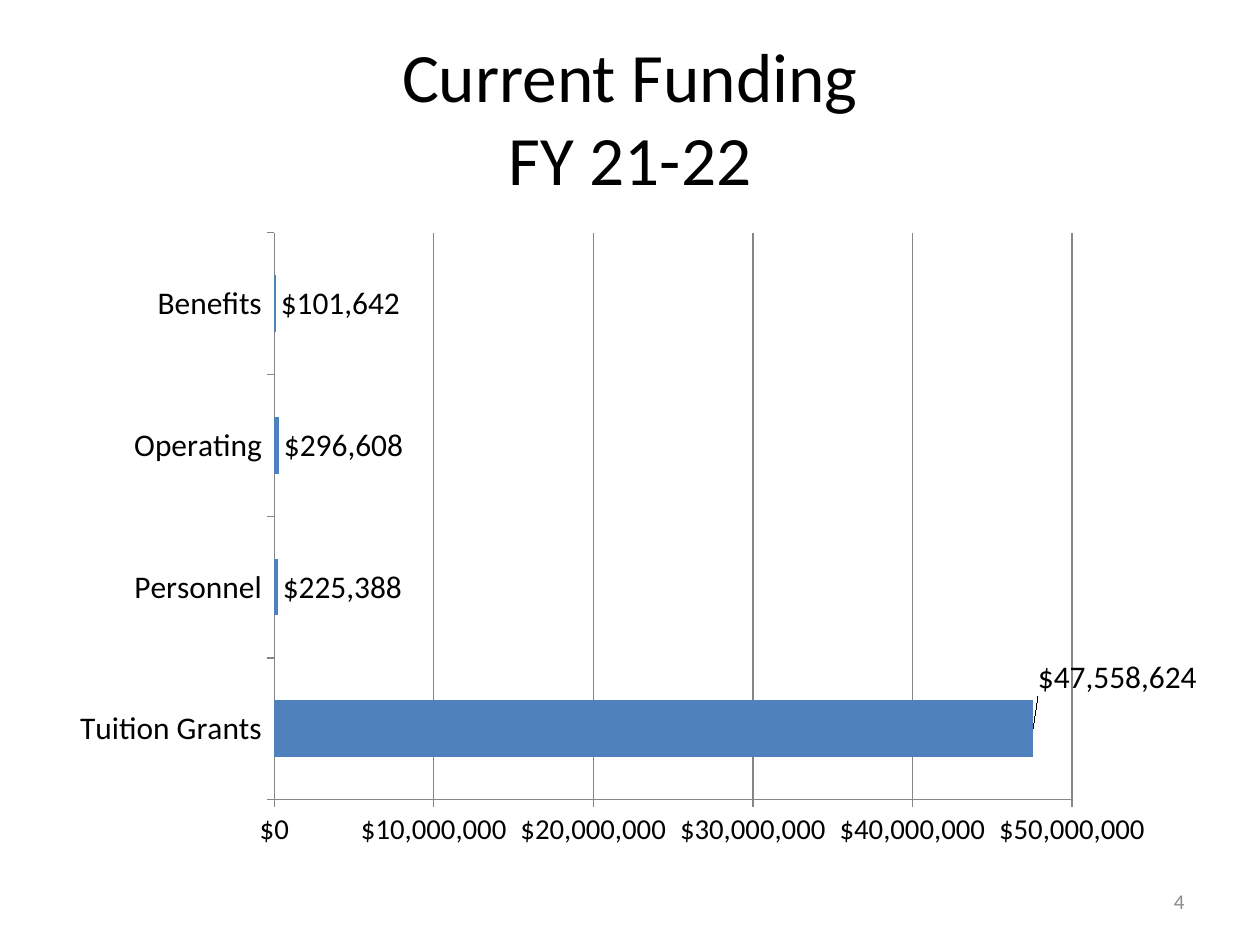
from lxml.etree import SubElement
from pptx import Presentation
from pptx.chart.data import CategoryChartData
from pptx.dml.color import RGBColor
from pptx.enum.chart import XL_CHART_TYPE, XL_LABEL_POSITION, XL_TICK_MARK
from pptx.enum.text import MSO_ANCHOR, MSO_AUTO_SIZE, PP_ALIGN
from pptx.oxml.ns import qn
from pptx.util import Pt

PX = 914400 / 126
BLACK = RGBColor(0x00, 0x00, 0x00)
GRAY = RGBColor(0x8C, 0x8C, 0x8C)
AXIS_GRAY = RGBColor(0x86, 0x86, 0x86)
BLUE = RGBColor(0x4F, 0x81, 0xBD)
FONT = "Calibri"
DOLLARS = '"$"#,##0'


def px(*lengths):
    return [round(length * PX) for length in lengths]


def add_manual_layout(parent, position, **settings):
    """Insert a c:layout with the given settings as a child of parent."""
    layout = SubElement(parent, qn("c:layout"))
    manual = SubElement(layout, qn("c:manualLayout"))
    for name, value in settings.items():
        SubElement(manual, qn(f"c:{name}")).set("val", str(value))
    parent.insert(position, layout)


deck = Presentation()
deck.slide_width, deck.slide_height = px(1260, 945)
page = deck.slides.add_slide(deck.slide_layouts[5])

title = page.shapes.title
title.left, title.top, title.width, title.height = px(63, 38, 1134, 157)
title.text_frame.text = "Current Funding\vFY 21-22"
title.text_frame.auto_size = MSO_AUTO_SIZE.NONE
number = page.shapes.add_textbox(*px(903, 876, 294, 50))
number.text_frame.text = "4"
for box, size, color, alignment in (
    (title, 39.6, BLACK, PP_ALIGN.CENTER),
    (number, 12, GRAY, PP_ALIGN.RIGHT),
):
    box.text_frame.word_wrap = True
    box.text_frame.vertical_anchor = MSO_ANCHOR.MIDDLE
    para = box.text_frame.paragraphs[0]
    para.alignment = alignment
    para.font.name = FONT
    para.font.size = Pt(size)
    para.font.color.rgb = color

funding = CategoryChartData(number_format=DOLLARS)
funding.categories = ["Tuition Grants", "Personnel", "Operating", "Benefits"]
funding.add_series("Series 1", (47558624, 225388, 296608, 101642))
chart = page.shapes.add_chart(
    XL_CHART_TYPE.BAR_CLUSTERED, *px(63, 220, 1134, 640), funding
).chart
chart.has_legend = False
chart.has_title = False
chart.font.name = FONT
chart.font.size = Pt(18)
chart.font.color.rgb = BLACK

amounts = chart.value_axis
amounts.minimum_scale = 0
amounts.maximum_scale = 50_000_000
amounts.major_unit = 10_000_000
amounts.has_major_gridlines = True
amounts.tick_labels.font.size = Pt(16.5)
amounts.tick_labels.number_format = DOLLARS
amounts.tick_labels.number_format_is_linked = False
for axis in (amounts, chart.category_axis):
    axis.major_tick_mark = XL_TICK_MARK.OUTSIDE
for ruled in (amounts, amounts.major_gridlines, chart.category_axis):
    ruled.format.line.color.rgb = AXIS_GRAY
    ruled.format.line.width = Pt(0.75)

plot = chart.plots[0]
plot.gap_width = 150
plot.vary_by_categories = False
bars = plot.series[0]
bars.format.fill.solid()
bars.format.fill.fore_color.rgb = BLUE
labels = bars.data_labels
labels.show_value = True
labels.number_format = DOLLARS
labels.number_format_is_linked = False
labels.position = XL_LABEL_POSITION.OUTSIDE_END

# The longest bar's label is raised above the bar's end.
bars.points[0].data_label.position = XL_LABEL_POSITION.OUTSIDE_END
raised_label = bars.data_labels._element.find(qn("c:dLbl"))
add_manual_layout(raised_label, 1, x=0, y=-0.08)
number_format = SubElement(raised_label, qn("c:numFmt"))
number_format.set("formatCode", DOLLARS)
number_format.set("sourceLinked", "0")
raised_label.insert(2, number_format)

plot_area = chart._chartSpace.chart.plotArea
for automatic in plot_area.findall(qn("c:layout")):
    plot_area.remove(automatic)
add_manual_layout(
    plot_area, 0, layoutTarget="inner", xMode="edge", yMode="edge",
    x=round(212 / 1134, 4), y=0.02, w=round(800 / 1134, 4), h=round(567 / 640, 4),
)

deck.save("out.pptx")
